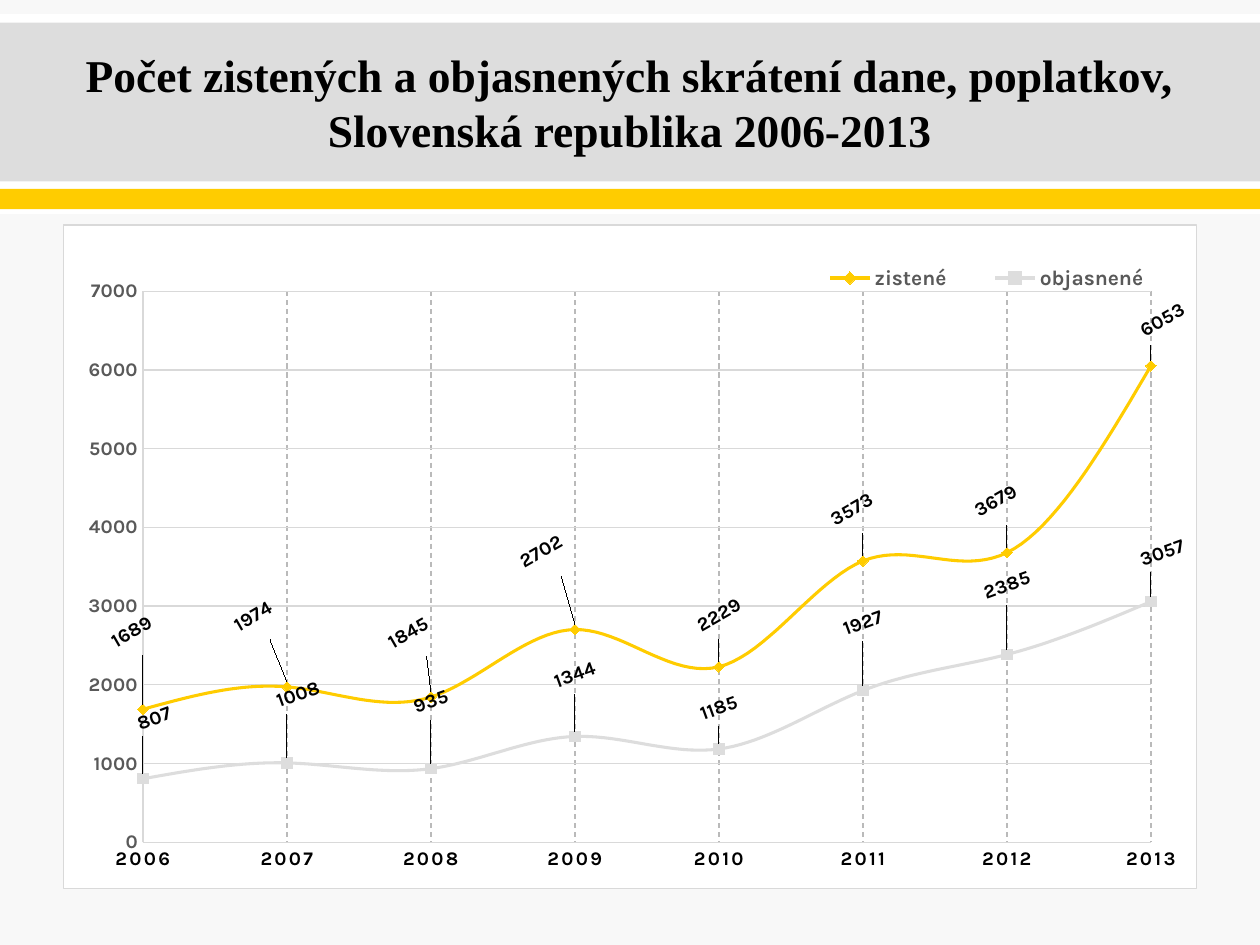
from lxml import etree
from pptx import Presentation
from pptx.chart.data import CategoryChartData
from pptx.dml.color import RGBColor
from pptx.enum.chart import (
    XL_CHART_TYPE as ChartType, XL_LABEL_POSITION as LabelPos,
    XL_LEGEND_POSITION as LegendPos, XL_MARKER_STYLE as Marker,
    XL_TICK_MARK as Tick)
from pptx.enum.dml import MSO_LINE as Dash
from pptx.enum.shapes import MSO_SHAPE as Shape
from pptx.enum.text import MSO_ANCHOR as Anchor, PP_ALIGN as Align
from pptx.oxml.ns import qn
from pptx.util import Inches, Pt

WHITE, BLACK, GRAY, YELLOW = "FFFFFF", "000000", "DDDDDD", "FFCC00"
RULE, GRID, MUTED = "D9D9D9", "BABABA", "595959"

YEARS = [str(year) for year in range(2006, 2014)]
# Label shifts are fractions of the chart's width and height
SERIES = [
    dict(name="zistené", color=YELLOW, marker=Marker.DIAMOND, tilt=-30,
         values=[1689, 1974, 1845, 2702, 2229, 3573, 3679, 6053],
         shifts=[(-0.01, -0.07), (-0.03, -0.06), (-0.02, -0.05),
                 (-0.03, -0.07), (0, -0.03), (-0.01, -0.03),
                 (-0.01, -0.03), (0.01, -0.02)]),
    dict(name="objasnené", color=GRAY, marker=Marker.SQUARE, tilt=-20,
         values=[807, 1008, 935, 1344, 1185, 1927, 2385, 3057],
         shifts=[(0.01, -0.05), (0.01, -0.06), (0, -0.06), (0, -0.05),
                 (0, -0.02), (0, -0.06), (0, -0.06), (0.01, -0.03)]),
]


def rgb(color):
    return RGBColor.from_string(color)


def set_layout(parent, after=None, **values):
    """Give a chart part a manual layout, first or behind the named child."""
    for old in parent.findall(qn("c:layout")):
        parent.remove(old)
    layout = etree.Element(qn("c:layout"))
    manual = etree.SubElement(layout, qn("c:manualLayout"))
    for tag, value in values.items():
        etree.SubElement(manual, qn(f"c:{tag}"), val=str(value))
    if after:
        parent.find(qn(after)).addnext(layout)
    else:
        parent.insert(0, layout)


class SlideBuilder:
    font = "Karla"
    title_font = "Times New Roman"

    def __init__(self, slide):
        self.slide = slide

    def style_font(self, font, size, color, name=None):
        look = dict(name=name or self.font, size=Pt(size), bold=True)
        for key, value in look.items():
            setattr(font, key, value)
        font.color.rgb = rgb(color)

    def style_line(self, line, color, width=0.75, dash=None):
        line.color.rgb = rgb(color)
        line.width = Pt(width)
        if dash:
            line.dash_style = dash

    def background(self, color):
        fill = self.slide.background.fill
        fill.solid()
        fill.fore_color.rgb = rgb(color)

    def band(self, top, height, color):
        band = self.slide.shapes.add_shape(
            Shape.RECTANGLE, 0, Inches(top), Inches(10), Inches(height))
        band.shadow.inherit = False
        band.fill.solid()
        band.fill.fore_color.rgb = rgb(color)
        band.line.fill.background()

    def title(self, text, left, top, width, height):
        title = self.slide.shapes.title
        place = dict(left=left, top=top, width=width, height=height)
        for key, value in place.items():
            setattr(title, key, Inches(value))
        frame = title.text_frame
        frame.text = text
        frame.word_wrap = True
        frame.vertical_anchor = Anchor.MIDDLE
        paragraph = frame.paragraphs[0]
        paragraph.alignment = Align.CENTER
        for run in paragraph.runs:
            self.style_font(run.font, 26, BLACK, self.title_font)
        # Bring the title in front of the bands
        self.slide.shapes._spTree.append(title._element)

    def line_chart(self, left, top, width, height):
        data = CategoryChartData()
        data.categories = YEARS
        for item in SERIES:
            data.add_series(item["name"], item["values"])
        chart = self.slide.shapes.add_chart(
            ChartType.LINE_MARKERS, Inches(left), Inches(top),
            Inches(width), Inches(height), data).chart
        chart.has_title = False
        self.style_font(chart.font, 11, BLACK)
        self.chart_frame(chart)
        self.axes(chart)
        self.legend(chart)
        for series, item in zip(chart.plots[0].series, SERIES):
            self.series(series, item)

    def chart_frame(self, chart):
        space = chart._chartSpace
        corners = etree.Element(qn("c:roundedCorners"), val="0")
        space.chart.addprevious(corners)
        frame = etree.Element(qn("c:spPr"))
        border = etree.Element(qn("a:ln"), w=str(Pt(0.75)))
        for parent, color in ((frame, WHITE), (border, RULE)):
            fill = etree.SubElement(parent, qn("a:solidFill"))
            etree.SubElement(fill, qn("a:srgbClr"), val=color)
        frame.append(border)
        space.chart.addnext(frame)
        set_layout(space.chart.plotArea, layoutTarget="inner", xMode="edge",
                   yMode="edge", x=0.07, y=0.1, w=0.89, h=0.83)

    def axes(self, chart):
        years, counts = chart.category_axis, chart.value_axis
        for axis, color, grid, dash in ((years, BLACK, GRID, Dash.DASH),
                                        (counts, MUTED, RULE, None)):
            axis.major_tick_mark = axis.minor_tick_mark = Tick.NONE
            axis.has_major_gridlines = True
            self.style_line(axis.major_gridlines.format.line, grid, dash=dash)
            self.style_line(axis.format.line, RULE)
            self.style_font(axis.tick_labels.font, 11, color)
        # Letter-spaced years
        years.tick_labels.font._element.set("spc", "120")
        counts.minimum_scale, counts.maximum_scale = 0, 7000
        counts.major_unit = 1000
        # Start the lines on the value axis itself
        element = counts._element
        for old in element.findall(qn("c:crossBetween")):
            element.remove(old)
        element.find(qn("c:crosses")).addnext(
            etree.Element(qn("c:crossBetween"), val="midCat"))

    def legend(self, chart):
        chart.has_legend = True
        chart.legend.position = LegendPos.TOP
        chart.legend.include_in_layout = False
        self.style_font(chart.legend.font, 12, MUTED)
        set_layout(chart.legend._element, "c:legendPos", xMode="edge",
                   yMode="edge", x=0.64, y=0.05, w=0.35, h=0.06)

    def series(self, series, item):
        series.smooth = True
        self.style_line(series.format.line, item["color"], 1.75)
        marker = series.marker
        marker.style, marker.size = item["marker"], 6
        marker.format.fill.solid()
        marker.format.fill.fore_color.rgb = rgb(item["color"])
        self.style_line(marker.format.line, item["color"])
        labels = series.data_labels
        labels.show_value = True
        self.tilted_label(labels, item["tilt"])
        for index, (x, y) in enumerate(item["shifts"]):
            label = series.points[index].data_label
            self.tilted_label(label, item["tilt"])
            set_layout(label._dLbl, "c:idx", x=x, y=y)

    def tilted_label(self, label, degrees):
        self.style_font(label.font, 11, BLACK)
        label.position = LabelPos.ABOVE
        body = next(label.font._element.iterancestors(qn("c:txPr")))[0]
        body.set("rot", str(degrees * 60000))
        body.set("vert", "horz")


def main():
    deck = Presentation()
    deck.slide_width, deck.slide_height = Inches(10), Inches(7.5)
    page = SlideBuilder(deck.slides.add_slide(deck.slide_layouts[5]))

    # Header bands
    page.background("F8F8F8")
    for top, height, color in ((0.11, 1.59, WHITE), (0.18, 1.26, GRAY),
                               (1.5, 0.16, YELLOW)):
        page.band(top, height, color)
    page.title("Počet zistených a objasnených skrátení dane, poplatkov,\v"
               "Slovenská republika 2006-2013", 0.5, 0.2, 9, 1.22)

    # Detected and solved cases by year
    page.line_chart(0.5, 1.78, 9, 5.28)
    deck.save("out.pptx")


if __name__ == "__main__":
    main()
